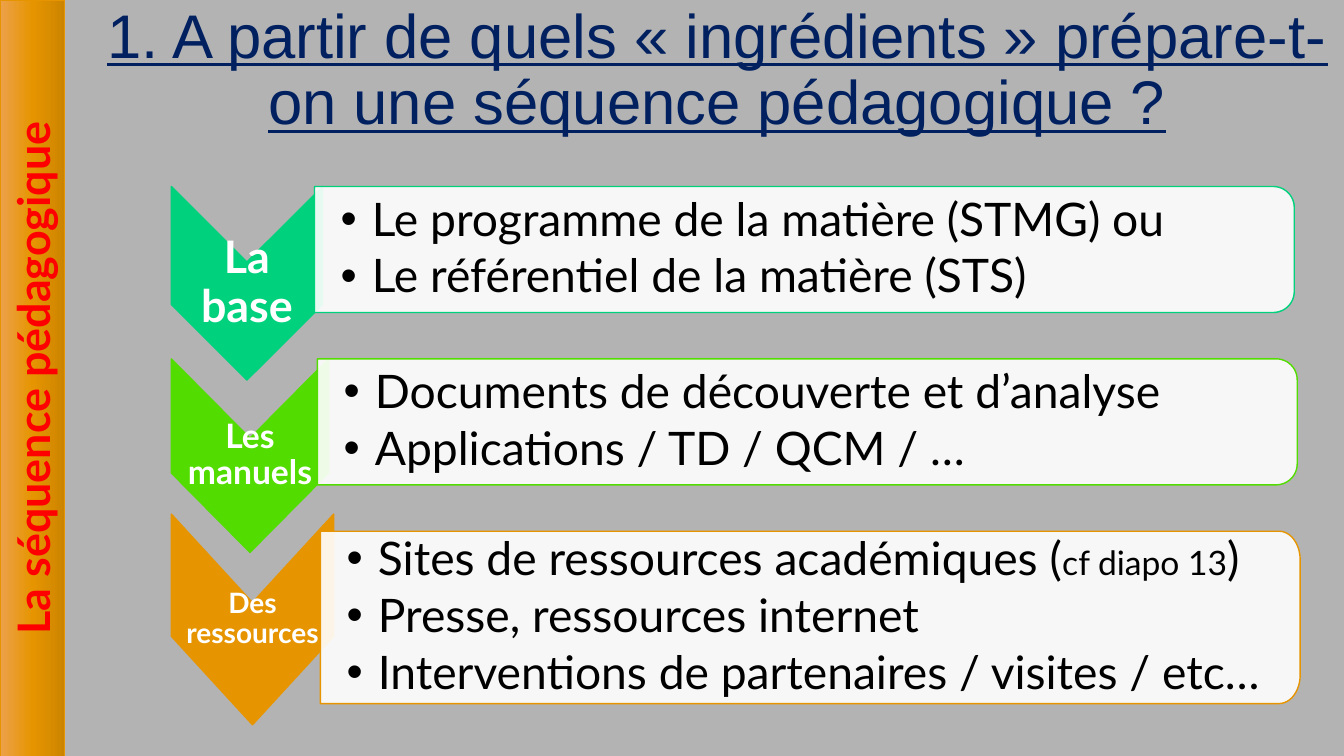
from math import cos, pi, sin

from lxml.etree import SubElement
from pptx import Presentation
from pptx.dml.color import RGBColor
from pptx.enum.shapes import MSO_SHAPE
from pptx.enum.text import MSO_ANCHOR, PP_ALIGN
from pptx.oxml import parse_xml
from pptx.oxml.ns import nsdecls, qn
from pptx.util import Inches, Pt

WIDTH, HEIGHT = Inches(13.33), Inches(7.5)
TITLE = "1. A partir de quels «\u00a0ingrédients\u00a0» prépare-t-on une séquence pédagogique ?"
SIDEBAR = "La séquence pédagogique"
SIDEBAR_STOPS = [(0, "ECA14B"), (50, "E69500"), (100, "CC8400")]
FIRST_TOP, PITCH = 24.67, 22.8
STEPS = [
    {"label": "La base", "size": 32, "color": "00D17D",
     "chevron": (12.75, 24.67, 11.25, 25.6), "depth": 0.39, "panel_height": 16.67,
     "items": [[("Le programme de la matière (STMG) ou", 33)],
               [("Le référentiel de la matière (STS)", 33)]]},
    {"label": "Les manuels", "size": 24, "color": "53DC00",
     "chevron": (12.75, 47.47, 11.7, 25.6), "depth": 0.41, "panel_height": 16.67,
     "items": [[("Documents de découverte et d’analyse", 33)],
               [("Applications / TD / QCM / …", 33)]]},
    {"label": "Des ressources", "size": 20, "color": "E69500",
     "chevron": (12.75, 68, 12.08, 27.87), "depth": 0.42, "panel_height": 22.8,
     "items": [[("Sites de ressources académiques (", 33), ("cf diapo 13", 24), (")", 33)],
               [("Presse, ressources internet", 33)],
               [("Interventions de partenaires / visites / etc…", 33)]]},
]


def rgb(value):
    """Turn a hex string into a colour."""
    return RGBColor.from_string(value)


def place(left, top, width, height):
    """Turn percentages of the slide into lengths."""
    return (round(WIDTH * left / 100), round(HEIGHT * top / 100),
            round(WIDTH * width / 100), round(HEIGHT * height / 100))


def write(shape, paragraphs, color, font="Lato", align=PP_ALIGN.CENTER, bold=False,
          underline=False, spacing=0.9, after=0, bullet=False,
          anchor=MSO_ANCHOR.MIDDLE, margins=(0.02, 0, 0.02, 0)):
    """Fill a shape with paragraphs, each a list of (words, size) runs."""
    frame = shape.text_frame
    frame.word_wrap = True
    frame.vertical_anchor = anchor
    (frame.margin_left, frame.margin_top,
     frame.margin_right, frame.margin_bottom) = map(Inches, margins)
    for index, runs in enumerate(paragraphs):
        paragraph = frame.add_paragraph() if index else frame.paragraphs[0]
        paragraph.alignment = align
        paragraph.line_spacing = spacing
        paragraph.space_after = Pt(after)
        if bullet:
            properties = paragraph._p.get_or_add_pPr()
            properties.set("marL", str(Inches(0.31)))
            properties.set("indent", str(-Inches(0.31)))
            SubElement(properties, qn("a:buFont")).set("typeface", "Arial")
            SubElement(properties, qn("a:buChar")).set("char", "•")
        for words, size in runs:
            run = paragraph.add_run()
            run.text = words
            run.font.name, run.font.size = font, Pt(size)
            run.font.bold, run.font.underline = bold, underline
            run.font.color.rgb = rgb(color)


def add_outline(slide, points, fill, line):
    """Draw a closed outline with a plain fill and a thin line."""
    builder = slide.shapes.build_freeform(*points[0])
    builder.add_line_segments(points[1:], close=True)
    outline = builder.convert_to_shape()
    outline.shadow.inherit = False
    outline.fill.solid()
    outline.fill.fore_color.rgb = rgb(fill)
    outline.line.color.rgb = rgb(line)
    outline.line.width = Pt(1)
    return outline


def add_sidebar(slide, box):
    """Draw the upright gradient band with its turned heading."""
    left, top, width, height = place(*box)
    band = slide.shapes.add_shape(
        MSO_SHAPE.RECTANGLE, left + (width - height) // 2, top + (height - width) // 2,
        height, width)
    band.rotation = 270
    band.shadow.inherit = False
    band.line.color.rgb = rgb("E69500")
    band.line.width = Pt(0.5)
    stops = "".join(f'<a:gs pos="{share * 1000}"><a:srgbClr val="{color}"/></a:gs>'
                    for share, color in SIDEBAR_STOPS)
    gradient = parse_xml(f'<a:gradFill {nsdecls("a")} rotWithShape="1"><a:gsLst>{stops}'
                         '</a:gsLst><a:lin ang="5400000" scaled="0"/></a:gradFill>')
    band._element.spPr.find(qn("a:prstGeom")).addnext(gradient)
    write(band, [[(SIDEBAR, 32)]], "FF0000", bold=True, spacing=1.0)


def add_title(slide, box):
    """Set the slide title in its placeholder."""
    title = slide.shapes.title
    title.left, title.top, title.width, title.height = place(*box)
    write(title, [[(TITLE, 44)]], "002060", font="Arial", underline=True,
          anchor=MSO_ANCHOR.TOP, margins=(0.1, 0.05, 0.1, 0.05))


def add_chevron(slide, box, step):
    """Draw a downward chevron with its label."""
    left, top, width, height = place(*box)
    right, middle, bottom = left + width, left + width // 2, top + height
    notch = round(height * step["depth"])
    points = [(right, top), (right, bottom - notch), (middle, bottom),
              (left, bottom - notch), (left, top), (middle, top + notch)]
    chevron = add_outline(slide, points, step["color"], step["color"])
    write(chevron, [[(step["label"], step["size"])]], "FFFFFF", bold=True)


def add_panel(slide, box, step):
    """Draw a list panel whose right corners are rounded."""
    left, top, width, height = place(*box)
    right, bottom = left + width, top + height
    across, down = round(WIDTH * 0.0157), height / 6
    turns = [pi / 2 * part / 12 for part in range(13)]
    upper = [(round(right - across + across * sin(turn)),
              round(top + down - down * cos(turn))) for turn in turns]
    lower = [(x, top + bottom - y) for x, y in reversed(upper)]
    panel = add_outline(slide, [(left, top), *upper, *lower, (left, bottom)],
                        "FFFFFF", step["color"])
    white = panel._element.spPr.find(qn("a:solidFill")).find(qn("a:srgbClr"))
    SubElement(white, qn("a:alpha")).set("val", "90000")
    write(panel, step["items"], "000000", align=PP_ALIGN.LEFT, after=5, bullet=True,
          margins=(0.26, 0.08, 0.08, 0.08))


def main():
    """Build the slide and save it."""
    deck = Presentation()
    deck.slide_width, deck.slide_height = WIDTH, HEIGHT
    slide = deck.slides.add_slide(deck.slide_layouts[5])
    slide.background.fill.solid()
    slide.background.fill.fore_color.rgb = rgb("B3B3B3")
    add_sidebar(slide, (0, 0, 4.8, 100))
    add_title(slide, (6.75, 0, 93.25, 20.8))
    for index, step in enumerate(STEPS):
        add_chevron(slide, step["chevron"], step)
        add_panel(slide, (23.4 + 0.22 * index, FIRST_TOP + PITCH * index,
                          72.9, step["panel_height"]), step)
    deck.save("out.pptx")


if __name__ == "__main__":
    main()
